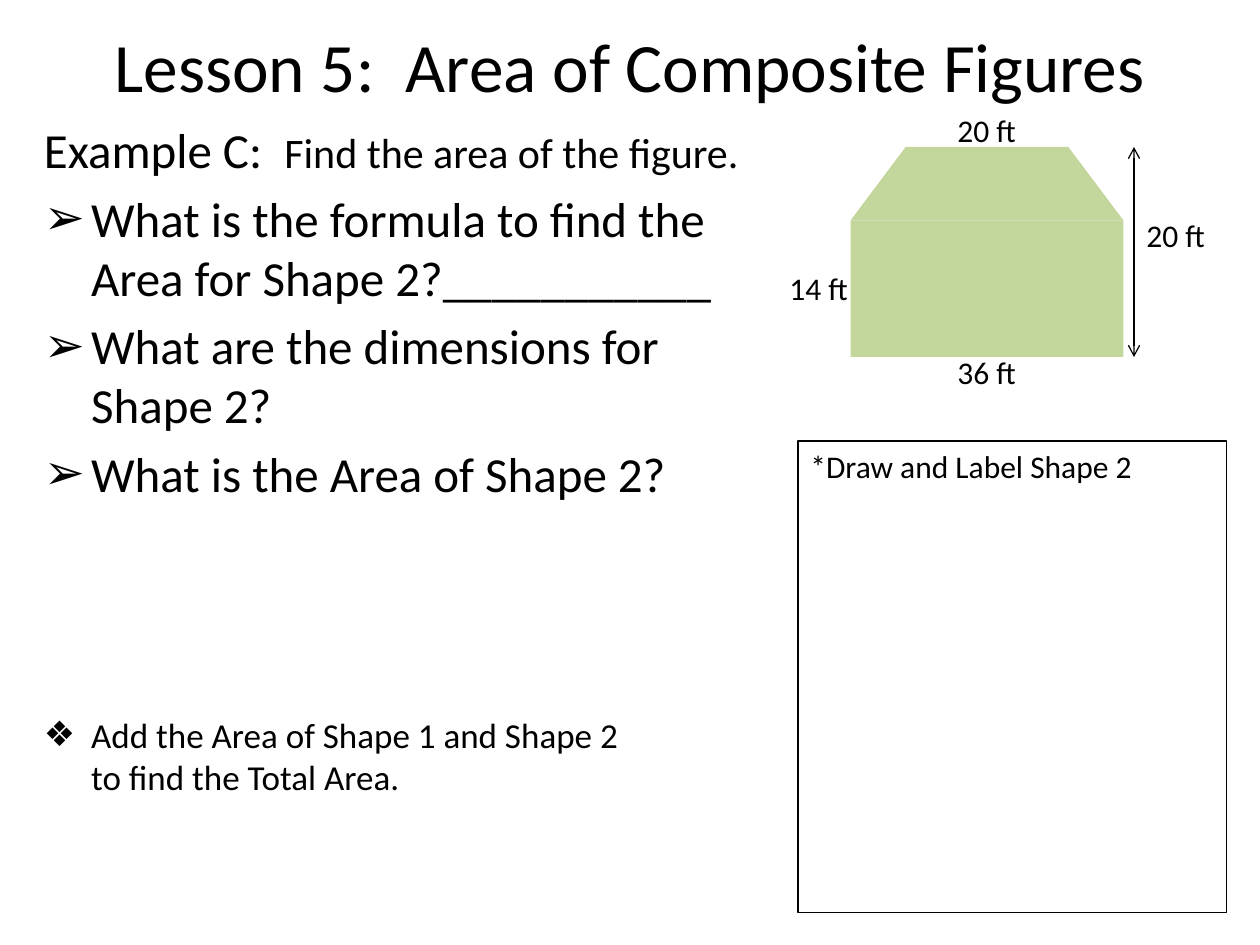
from dataclasses import dataclass
from typing import Optional

from lxml.etree import SubElement
from pptx import Presentation
from pptx.dml.color import RGBColor
from pptx.enum.shapes import MSO_CONNECTOR, MSO_SHAPE
from pptx.enum.text import MSO_ANCHOR, PP_ALIGN
from pptx.oxml.ns import qn
from pptx.util import Pt

EMU_PER_PX = 7620
BLACK = "000000"
GREEN = "C3D69B"
ARROW_BULLET = "➢"
DIAMOND_BULLET = "❖"


@dataclass
class Box:
    left: int
    top: int
    width: int
    height: int

    def emu(self) -> list[int]:
        return [px(n) for n in (self.left, self.top, self.width, self.height)]


@dataclass
class Line:
    runs: list[tuple[str, float]]
    bullet: Optional[str] = None
    before: float = 0
    align: PP_ALIGN = PP_ALIGN.LEFT


@dataclass
class Measure:
    text: str
    left: int
    top: int


def px(length: int) -> int:
    return length * EMU_PER_PX


def color(value: str) -> RGBColor:
    return RGBColor.from_string(value)


def add_bullet(paragraph, character: str) -> None:
    properties = paragraph._p.get_or_add_pPr()
    properties.set("marL", str(px(45)))
    properties.set("indent", str(px(-45)))
    SubElement(properties, qn("a:buFont"), typeface="Arial")
    SubElement(properties, qn("a:buChar"), char=character)


def write(frame, lines: list[Line], anchor: MSO_ANCHOR = MSO_ANCHOR.TOP) -> None:
    frame.word_wrap = True
    frame.vertical_anchor = anchor
    for number, line in enumerate(lines):
        paragraph = frame.add_paragraph() if number else frame.paragraphs[0]
        paragraph.alignment = line.align
        paragraph.space_before = Pt(line.before)
        if line.bullet:
            add_bullet(paragraph, line.bullet)
        for text, size in line.runs:
            for part_number, part in enumerate(text.split("\n")):
                if part_number:
                    paragraph.add_line_break()
                run = paragraph.add_run()
                run.text = part
                run.font.color.rgb = color(BLACK)
                for name, value in {"name": "Calibri", "size": Pt(size)}.items():
                    setattr(run.font, name, value)


def add_text(slide, box: Box, lines: list[Line], anchor: MSO_ANCHOR = MSO_ANCHOR.TOP) -> None:
    write(slide.shapes.add_textbox(*box.emu()).text_frame, lines, anchor)


def add_figure(slide, kind: MSO_SHAPE, box: Box, fill: Optional[str] = None,
               outline: Optional[str] = None):
    figure = slide.shapes.add_shape(kind, *box.emu())
    figure.shadow.inherit = False
    if fill:
        figure.fill.solid()
        figure.fill.fore_color.rgb = color(fill)
    else:
        figure.fill.background()
    if outline:
        figure.line.color.rgb = color(outline)
        figure.line.width = Pt(0.75)
    else:
        figure.line.fill.background()
    return figure


def add_height_arrow(slide, x: int, top: int, bottom: int) -> None:
    arrow = slide.shapes.add_connector(
        MSO_CONNECTOR.STRAIGHT, px(x), px(top), px(x), px(bottom))
    arrow.line.color.rgb = color(BLACK)
    arrow.line.width = Pt(0.75)
    for end in ("a:headEnd", "a:tailEnd"):
        SubElement(arrow.line._ln, qn(end), type="arrow")
    SubElement(arrow._element.spPr, qn("a:effectLst"))


LESSON_TITLE = Line([("Lesson 5:  Area of Composite Figures", 39.6)], align=PP_ALIGN.CENTER)
QUESTIONS = [
    "What is the formula to find the Area for Shape 2?___________",
    "What are the dimensions for Shape 2?",
    "What is the Area of Shape 2?",
]
EXAMPLE = [
    Line([("Example C:  ", 28), ("Find the area of the figure.", 24)]),
    *[Line([(question, 28)], ARROW_BULLET, 5.6) for question in QUESTIONS],
    Line([("Add the Area of Shape 1 and Shape 2\nto find the Total Area.", 20)],
         DIAMOND_BULLET, 121),
]
MEASURES = [
    Measure("20 ft", 1080, 200),
    Measure("14 ft", 740, 250),
    Measure("36 ft", 900, 330),
    Measure("20 ft", 900, 100),
]


def main() -> None:
    deck = Presentation()
    deck.slide_width, deck.slide_height = px(1200), px(900)
    slide = deck.slides.add_slide(deck.slide_layouts[6])

    add_text(slide, Box(60, 20, 1080, 84), [LESSON_TITLE], MSO_ANCHOR.MIDDLE)
    add_text(slide, Box(30, 108, 700, 782), EXAMPLE)

    drawing_area = add_figure(slide, MSO_SHAPE.RECTANGLE, Box(760, 420, 408, 449), outline=BLACK)
    write(drawing_area.text_frame, [Line([("*Draw and Label Shape 2", 18)])])

    add_figure(slide, MSO_SHAPE.RECTANGLE, Box(810, 210, 260, 130), GREEN)
    roof = add_figure(slide, MSO_SHAPE.TRAPEZOID, Box(810, 140, 260, 70), GREEN)
    roof.adjustments[0] = 0.75
    for measure in MEASURES:
        add_text(slide, Box(measure.left, measure.top, 90, 48), [Line([(measure.text, 18)])])
    add_height_arrow(slide, 1080, 140, 340)

    deck.save("out.pptx")


if __name__ == "__main__":
    main()
